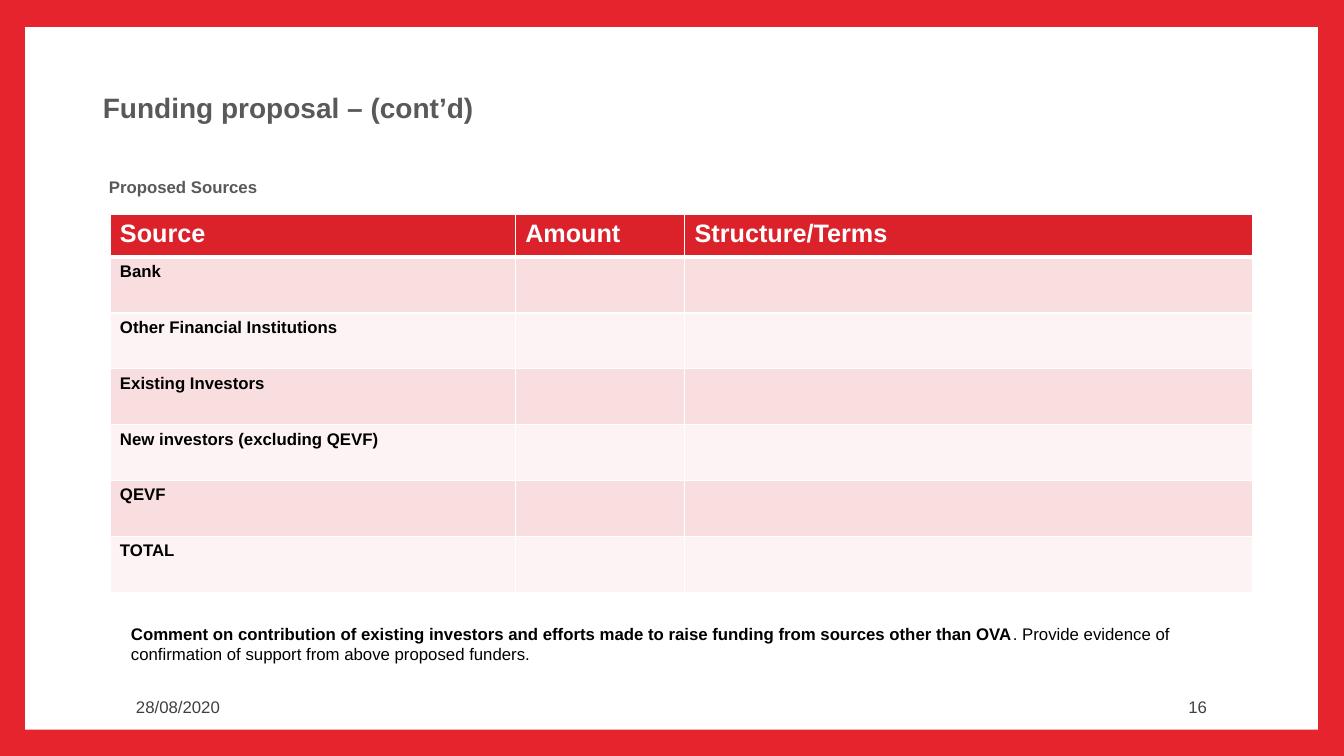
from lxml.etree import SubElement
from pptx import Presentation
from pptx.dml.color import RGBColor
from pptx.enum.shapes import MSO_SHAPE
from pptx.enum.text import MSO_ANCHOR, MSO_AUTO_SIZE, PP_ALIGN
from pptx.oxml.ns import qn
from pptx.util import Inches, Pt

RED, WHITE, GREY, DARK, BLACK = "DB222B", "FFFFFF", "595959", "404040", "000000"


def paint(fill, color, alpha=100):
    """Fill with a solid colour; alpha is the opacity in percent."""
    fill.solid()
    fill.fore_color.rgb = RGBColor.from_string(color)
    if alpha < 100:
        tone = fill._xPr.find(qn("a:solidFill"))[0]
        SubElement(tone, qn("a:alpha"), val=str(alpha * 1000))


def write(frame, text, size, color, bold=False):
    """Add a run to the first paragraph and return that paragraph."""
    para = frame.paragraphs[0]
    run = para.add_run()
    run.text = text
    look = {"name": "Arial", "size": Pt(size), "bold": bold}
    for key, value in look.items():
        setattr(run.font, key, value)
    run.font.color.rgb = RGBColor.from_string(color)
    return para


prs = Presentation()
prs.slide_width, prs.slide_height = Inches(13.33), Inches(7.5)
slide = prs.slides.add_slide(prs.slide_layouts[1])
shapes = slide.shapes
paint(slide.background.fill, "E5242D")

# White page inside the red frame, behind the placeholders
page = shapes.add_shape(MSO_SHAPE.RECTANGLE, Inches(0.25), Inches(0.27),
                        Inches(12.82), Inches(6.97))
page.shadow.inherit = False
page.line.fill.background()
paint(page.fill, WHITE)
shapes._spTree.insert(2, page._element)

# Title and subtitle
title, body = shapes.title, slide.placeholders[1]
heads = [
    (title, (0.92, 0.67, 10.8, 0.83), "Funding proposal – (cont’d)", 20, 0, MSO_ANCHOR.MIDDLE),
    (body, (0.98, 1.73, 11.5, 5.05), "Proposed Sources", 12, 14, MSO_ANCHOR.TOP),
]
for shape, box, text, size, gap, anchor in heads:
    for side, value in zip(("left", "top", "width", "height"), box):
        setattr(shape, side, Inches(value))
    frame = shape.text_frame
    frame.auto_size = MSO_AUTO_SIZE.NONE
    frame.vertical_anchor = anchor
    para = write(frame, text, size, GREY, True)
    para.alignment = PP_ALIGN.LEFT
    para.line_spacing = 0.9
    para.space_before = Pt(gap)
props = body.text_frame.paragraphs[0]._p.get_or_add_pPr()
props.set("marL", "0")
props.set("indent", "0")
SubElement(props, qn("a:buNone"))

# Funding table
rows = [
    ("Source", "Amount", "Structure/Terms"),
    ("Bank", "", ""),
    ("Other Financial Institutions", "", ""),
    ("Existing Investors", "", ""),
    ("New investors (excluding QEVF)", "", ""),
    ("QEVF", "", ""),
    ("TOTAL", "", ""),
]
widths = (4.02, 1.68, 5.63)
table = shapes.add_table(len(rows), len(widths), Inches(1.09), Inches(2.13),
                         Inches(sum(widths)), Inches(3.75)).table
for column, width in zip(table.columns, widths):
    column.width = Inches(width)
for r, texts in enumerate(rows):
    head = r == 0
    table.rows[r].height = Inches(0.42 if head else 3.33 / 6)
    for c, text in enumerate(texts):
        cell = table.cell(r, c)
        props = cell._tc.get_or_add_tcPr()
        for side in "LRTB":
            thick = (head and side == "B") or (r == 1 and side == "T")
            line = SubElement(props, qn("a:ln" + side), w=str(Pt(3 if thick else 1)))
            solid = SubElement(line, qn("a:solidFill"))
            SubElement(solid, qn("a:srgbClr"), val=WHITE)
        paint(cell.fill, RED, 100 if head else 15 if r % 2 else 5)
        if text:
            write(cell.text_frame, text, 18 if head else 12, WHITE if head else BLACK, True)

# Comment, date and page number
comment = [
    ("Comment on contribution of existing investors and efforts made to raise "
     "funding from sources other than OVA", True),
    (". Provide evidence of confirmation of support from above proposed funders.", False),
]
notes = [
    ((1.2, 6.14, 11.22, 0.5), comment, BLACK, PP_ALIGN.LEFT, MSO_ANCHOR.TOP),
    ((1.25, 6.81, 2.55, 0.4), [("28/08/2020", False)], DARK, PP_ALIGN.LEFT, MSO_ANCHOR.MIDDLE),
    ((10.2, 6.81, 1.87, 0.4), [("16", False)], DARK, PP_ALIGN.RIGHT, MSO_ANCHOR.MIDDLE),
]
for box, parts, color, align, anchor in notes:
    frame = shapes.add_textbox(*map(Inches, box)).text_frame
    frame.word_wrap = True
    frame.vertical_anchor = anchor
    for text, bold in parts:
        write(frame, text, 12, color, bold).alignment = align

prs.save("out.pptx")
